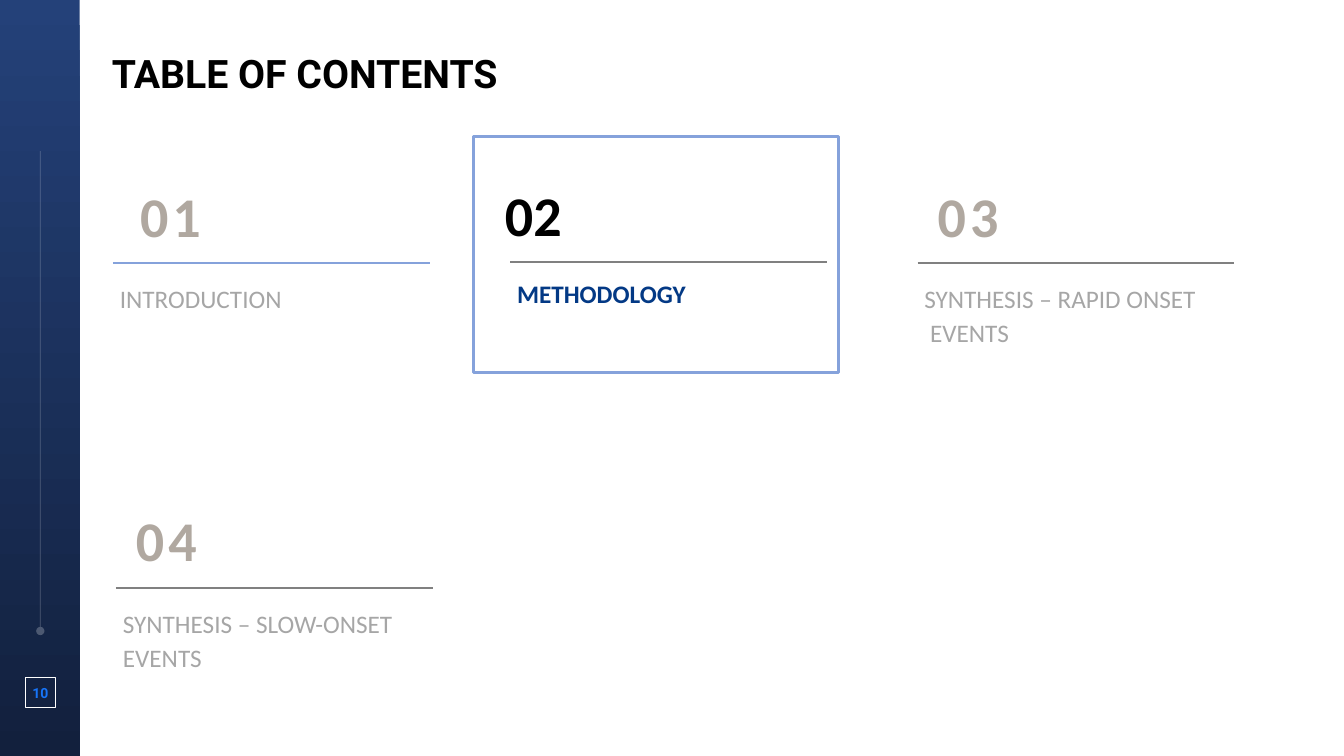
from lxml import etree
from pptx import Presentation
from pptx.dml.color import RGBColor as RGB
from pptx.enum.shapes import MSO_CONNECTOR as Link, MSO_SHAPE as Form
from pptx.enum.text import MSO_ANCHOR as Anchor, MSO_AUTO_SIZE as Fit, PP_ALIGN as Align
from pptx.oxml.ns import qn
from pptx.util import Inches, Pt

HUES = {
    "top": "244179", "base": "12203D", "white": "FFFFFF", "black": "000000",
    "page": "1775F9", "gray": "A6A6A6", "rule": "808080", "sky": "85A2DB",
    "navy": "033985", "sand": "B0A8A0",
}

# number, label, rule left, rule top, number shift, number width,
# label width, label height, rule colour, current section
TOPICS = [
    ("01", "INTRODUCTION", 1.12, 2.61, 0.17, 0.82, 2.38, 0.4, "sky", False),
    ("02", "METHODOLOGY", 5.06, 2.6, -0.15, 0.82, 2.14, 0.42, "rule", True),
    ("03", "SYNTHESIS – RAPID ONSET\v EVENTS", 9.1, 2.61, 0.1, 0.91, 3.26, 0.77, "rule", False),
    ("04", "SYNTHESIS – SLOW-ONSET\vEVENTS", 1.15, 5.83, 0.1, 0.91, 3.25, 0.77, "rule", False),
]


class Deck:
    def __init__(self):
        self.show = Presentation()
        self.show.slide_width, self.show.slide_height = Inches(13.33), Inches(7.5)
        self.slide = self.show.slides.add_slide(self.show.slide_layouts[5])

    def hue(self, name):
        return RGB.from_string(HUES[name])

    def style(self, para, font, size, hue, bold, space=0):
        for run in para.runs:
            face = run.font
            face.name, face.size, face.bold = font, Pt(size), bold
            face.color.rgb = self.hue(hue)
            if space:
                run._r.get_or_add_rPr().set("spc", str(space * 100))

    def pad(self, frame):
        frame.margin_left = frame.margin_right = 0
        frame.margin_top = frame.margin_bottom = 0

    def title(self, text, x, y, w, h):
        box = self.slide.shapes.title
        box.left, box.top, box.width, box.height = map(Inches, (x, y, w, h))
        frame = box.text_frame
        frame.text = text
        frame.vertical_anchor = Anchor.MIDDLE
        frame.auto_size = Fit.SHAPE_TO_FIT_TEXT
        self.pad(frame)
        para = frame.paragraphs[0]
        para.alignment = Align.LEFT
        self.style(para, "Roboto", 28, "black", True)

    def text(self, text, x, y, w, h, size, hue, bold=False, font="Calibri",
             space=0, after=0, lead=None):
        """Add an unwrapped box that fits its text, and return its frame."""
        frame = self.slide.shapes.add_textbox(*map(Inches, (x, y, w, h))).text_frame
        frame.text = text
        frame.word_wrap = False
        frame.auto_size = Fit.SHAPE_TO_FIT_TEXT
        para = frame.paragraphs[0]
        para.space_after = Pt(after)
        para.line_spacing = lead
        self.style(para, font, size, hue, bold, space)
        return frame

    def rect(self, x, y, w, h, hue=None, width=0, blend=None):
        box = self.slide.shapes.add_shape(Form.RECTANGLE, *map(Inches, (x, y, w, h)))
        box.shadow.inherit = False
        if blend:
            box.fill.gradient()
            box.fill.gradient_angle = 270
            for stop, name, place in zip(box.fill.gradient_stops, blend, (0, 1)):
                stop.color.rgb, stop.position = self.hue(name), place
        else:
            box.fill.background()
        if hue:
            box.line.color.rgb, box.line.width = self.hue(hue), Pt(width)
        else:
            box.line.fill.background()

    def line(self, x1, y1, x2, y2, hue, width, alpha=None, dot=False):
        link = self.slide.shapes.add_connector(Link.STRAIGHT, *map(Inches, (x1, y1, x2, y2)))
        link.line.color.rgb, link.line.width = self.hue(hue), Pt(width)
        props = link._element.spPr
        if alpha:
            tint = props.find(".//" + qn("a:srgbClr"))
            etree.SubElement(tint, qn("a:alpha")).set("val", str(alpha * 1000))
        if dot:
            etree.SubElement(props.find(qn("a:ln")), qn("a:headEnd")).set("type", "oval")
        etree.SubElement(props, qn("a:effectLst"))

    def topic(self, num, label, x, y, shift, wide, w, h, hue, now):
        """Add one contents entry: number, rule and label."""
        self.line(x, y, x + 3.14, y, hue, 1.5)
        self.text(num, x + shift, y - 0.86, wide, 0.77, 40,
                  "black" if now else "sand", True, space=0 if now else 3, after=6)
        self.text(label, x - 0.03, y + 0.11, w, h, 18, "navy" if now else "gray", now,
                  after=0 if now else 12, lead=None if now else 1.14)

    def side(self, page):
        self.rect(0, 0, 0.79, 7.5, blend=("top", "base"))
        self.line(0.4, 6.26, 0.4, 1.5, "white", 0.5, alpha=24, dot=True)
        self.rect(0.25, 6.72, 0.3, 0.3, "white", 0.5)
        frame = self.text(page, 0.25, 6.79, 0.3, 0.17, 10, "page", True, "Roboto")
        frame.word_wrap = True
        frame.paragraphs[0].alignment = Align.CENTER
        self.pad(frame)


def main():
    deck = Deck()
    deck.side("10")
    deck.title("TABLE OF CONTENTS", 1.11, 0.49, 11.86, 0.47)
    for topic in TOPICS:
        deck.topic(*topic)
    deck.rect(4.7, 1.35, 3.62, 2.35, "sky", 2.25)
    deck.show.save("out.pptx")


if __name__ == "__main__":
    main()
